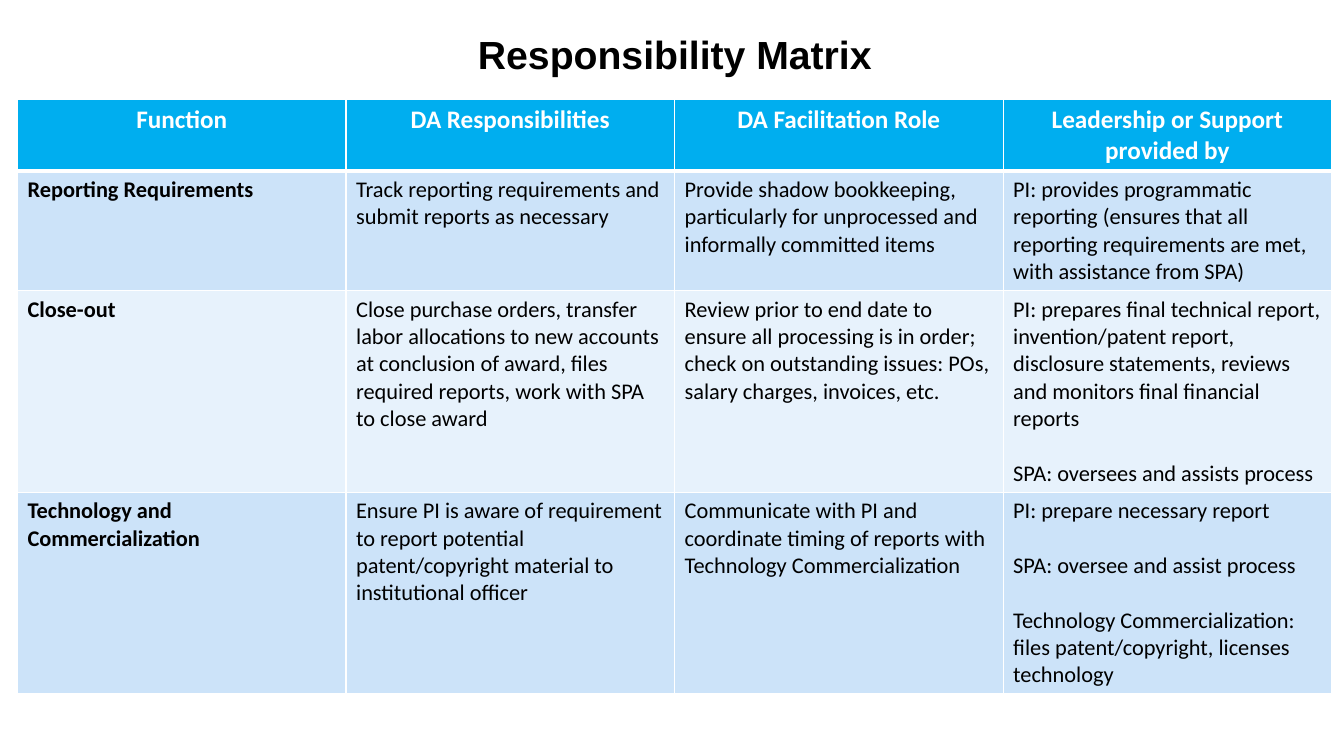
from lxml.etree import SubElement
from pptx import Presentation
from pptx.dml.color import RGBColor
from pptx.enum.text import PP_ALIGN as Align
from pptx.oxml.ns import qn
from pptx.util import Pt

TITLE = "Responsibility Matrix"
HEADINGS = ["Function", "DA Responsibilities", "DA Facilitation Role",
            "Leadership or Support provided by"]
# Each cell is a list of paragraphs.
FUNCTIONS = [
    [["Reporting Requirements"],
     ["Track reporting requirements and submit reports as necessary"],
     ["Provide shadow bookkeeping, particularly for unprocessed and "
      "informally committed items"],
     ["PI: provides programmatic reporting (ensures that all reporting "
      "requirements are met, with assistance from SPA)"]],
    [["Close-out"],
     ["Close purchase orders, transfer labor allocations to new accounts at "
      "conclusion of award, files required reports, work with SPA to close award"],
     ["Review prior to end date to ensure all processing is in order; check on "
      "outstanding issues: POs, salary charges, invoices, etc."],
     ["PI: prepares final technical report, invention/patent report, disclosure "
      "statements, reviews and monitors final financial reports",
      "SPA: oversees and assists process"]],
    [["Technology and Commercialization"],
     ["Ensure PI is aware of requirement to report potential patent/copyright "
      "material to institutional officer"],
     ["Communicate with PI and coordinate timing of reports with Technology "
      "Commercialization"],
     ["PI: prepare necessary report",
      "SPA: oversee and assist process",
      "Technology Commercialization: files patent/copyright, licenses technology"]],
]
COLORS = {"header": "00AEEF", "odd": "CCE3F9", "even": "E7F2FC",
          "white": "FFFFFF", "black": "000000"}
COLUMN_WIDTH = 234.7
ROW_HEIGHTS = [51, 85.5, 144, 144]
PARAGRAPH_GAP = 19.5


def color(name):
    return RGBColor.from_string(COLORS[name])


def add_text(para, text, font, size, ink, bold):
    span = para.add_run()
    span.text = text
    span.font.name = font
    span.font.size = Pt(size)
    span.font.bold = bold
    span.font.color.rgb = color(ink)


def set_borders(cell, top, bottom):
    """Draw white borders; top and bottom are widths in points."""
    properties = cell._tc.get_or_add_tcPr()
    widths = {"a:lnL": 1, "a:lnR": 1, "a:lnT": top, "a:lnB": bottom}
    for position, (tag, width) in enumerate(widths.items()):
        line = SubElement(properties, qn(tag), w=str(Pt(width)))
        fill = SubElement(line, qn("a:solidFill"))
        SubElement(fill, qn("a:srgbClr"), val=COLORS["white"])
        properties.insert(position, line)


def fill_cell(cell, paragraphs, row, column):
    header = row == 0
    cell.fill.solid()
    cell.fill.fore_color.rgb = color("header" if header else "odd" if row % 2 else "even")
    set_borders(cell, top=3 if row == 1 else 1, bottom=3 if header else 1)
    for index, text in enumerate(paragraphs):
        para = cell.text_frame.add_paragraph() if index else cell.text_frame.paragraphs[0]
        para.alignment = Align.CENTER if header else Align.LEFT
        if index:
            para.space_before = Pt(PARAGRAPH_GAP)
        add_text(para, text, "Calibri", 18 if header else 16,
                 "white" if header else "black", header or column == 0)


def add_matrix(page):
    rows = [[[heading] for heading in HEADINGS]] + FUNCTIONS
    frame = page.shapes.add_table(
        len(rows), len(HEADINGS), Pt(12.5), Pt(71),
        Pt(COLUMN_WIDTH * len(HEADINGS)), Pt(sum(ROW_HEIGHTS)))
    table = frame.table
    for column in table.columns:
        column.width = Pt(COLUMN_WIDTH)
    for row, height in enumerate(ROW_HEIGHTS):
        table.rows[row].height = Pt(height)
        for column, paragraphs in enumerate(rows[row]):
            fill_cell(table.cell(row, column), paragraphs, row, column)


def add_title(page):
    box = page.shapes.add_textbox(Pt(311), Pt(18), Pt(342), Pt(41))
    box.text_frame.word_wrap = True
    para = box.text_frame.paragraphs[0]
    para.alignment = Align.CENTER
    add_text(para, TITLE, "Arial", 28, "black", True)


def main():
    deck = Presentation()
    deck.slide_width, deck.slide_height = Pt(960), Pt(540)
    page = deck.slides.add_slide(deck.slide_layouts[6])
    add_matrix(page)
    add_title(page)
    deck.save("out.pptx")


if __name__ == "__main__":
    main()
